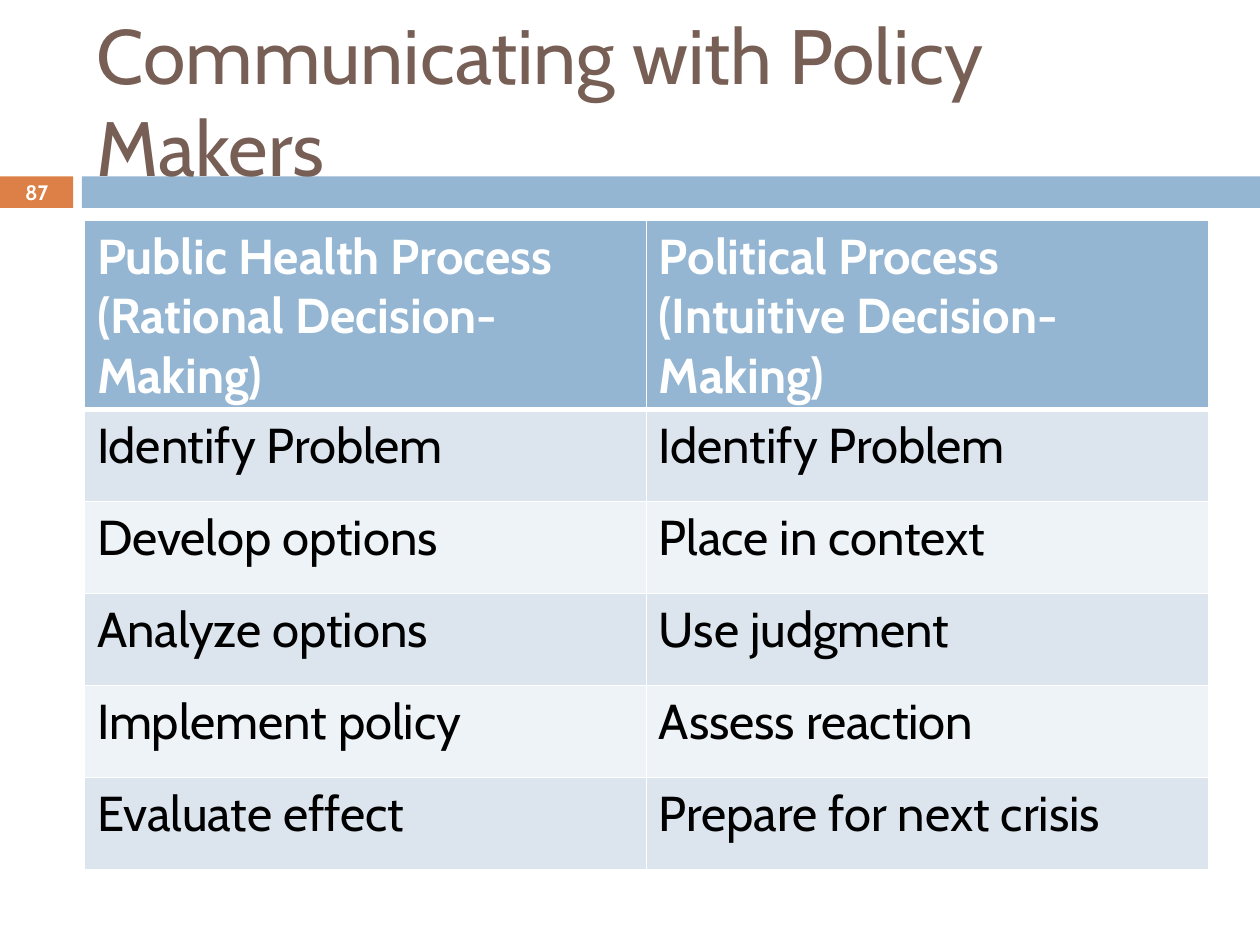
from lxml import etree
from pptx import Presentation
from pptx.dml.color import RGBColor as RGB
from pptx.enum.shapes import MSO_SHAPE as SHAPE
from pptx.enum.text import MSO_ANCHOR as ANCHOR, PP_ALIGN as ALIGN
from pptx.oxml.ns import qn
from pptx.util import Inches, Pt

# Content
TITLE = "Communicating with Policy Makers"
NUMBER = "87"
HEADS = [
    ("Public Health Process", "(Rational Decision-Making)"),
    ("Political Process", "(Intuitive Decision-Making)"),
]
STEPS = [
    ("Identify Problem", "Identify Problem"),
    ("Develop options", "Place in context"),
    ("Analyze options", "Use judgment"),
    ("Implement policy", "Assess reaction"),
    ("Evaluate effect", "Prepare for next crisis"),
]

# Style
FONT = "Cabin"
COLORS = {
    "white": "FFFFFF", "black": "000000", "brown": "775F55",
    "orange": "DD8047", "blue": "94B6D2", "odd": "DCE5EE", "even": "EEF3F7",
}
LEFT, WIDTH = 0.67, 8.92
HEAD_H, STEP_H = 1.5, 0.73


def color(name):
    return RGB.from_string(COLORS[name])


def write(frame, lines, size, hue, bold=False, align=None):
    for i, line in enumerate(lines):
        para = frame.add_paragraph() if i else frame.paragraphs[0]
        para.alignment = align
        run = para.add_run()
        run.text = line
        font = run.font
        font.name, font.size, font.bold = FONT, Pt(size), bold
        font.color.rgb = color(hue)


def add_bar(slide, left, width, hue):
    bar = slide.shapes.add_shape(
        SHAPE.RECTANGLE, Inches(left), Inches(1.4), Inches(width), Inches(0.25))
    bar.shadow.inherit = False
    bar.fill.solid()
    bar.fill.fore_color.rgb = color(hue)
    bar.line.fill.background()


def add_text(slide, box, lines, *style):
    frame = slide.shapes.add_textbox(*map(Inches, box)).text_frame
    frame.word_wrap = True
    frame.vertical_anchor = ANCHOR.MIDDLE
    write(frame, lines, *style)


def set_edges(cell, widths):
    props = cell._tc.get_or_add_tcPr()
    for i, (side, width) in enumerate(widths.items()):
        line = etree.Element(qn(f"a:ln{side}"), w=str(Pt(width)))
        fill = etree.SubElement(line, qn("a:solidFill"))
        etree.SubElement(fill, qn("a:srgbClr"), val=COLORS["white"])
        props.insert(i, line)


def add_grid(slide):
    rows = [HEADS] + [[(step,) for step in pair] for pair in STEPS]
    height = HEAD_H + STEP_H * len(STEPS)
    table = slide.shapes.add_table(
        len(rows), len(HEADS), Inches(LEFT), Inches(1.75),
        Inches(WIDTH), Inches(height)).table
    for col in table.columns:
        col.width = Inches(WIDTH / len(HEADS))
    for r, row in enumerate(rows):
        head = r == 0
        table.rows[r].height = Inches(HEAD_H if head else STEP_H)
        for c, lines in enumerate(row):
            cell = table.cell(r, c)
            cell.fill.solid()
            cell.fill.fore_color.rgb = color(
                "blue" if head else "odd" if r % 2 else "even")
            write(cell.text_frame, lines, 28, "white" if head else "black", head)
            set_edges(cell, {"L": 1, "R": 1, "T": 3 if r == 1 else 1,
                             "B": 3 if head else 1})


def main():
    deck = Presentation()
    deck.slide_width, deck.slide_height = Inches(10), Inches(7.5)
    slide = deck.slides.add_slide(deck.slide_layouts[6])

    # Number tab and long bar
    add_bar(slide, 0, 0.58, "orange")
    add_bar(slide, 0.65, 9.35, "blue")

    # Title, table and slide number
    add_text(slide, (LEFT, 0.25, WIDTH, 1.08), [TITLE], 44, "brown")
    add_grid(slide)
    add_text(slide, (0, 1.39, 0.58, 0.27), [NUMBER], 11.9, "white", True,
             ALIGN.CENTER)

    deck.save("out.pptx")


if __name__ == "__main__":
    main()
